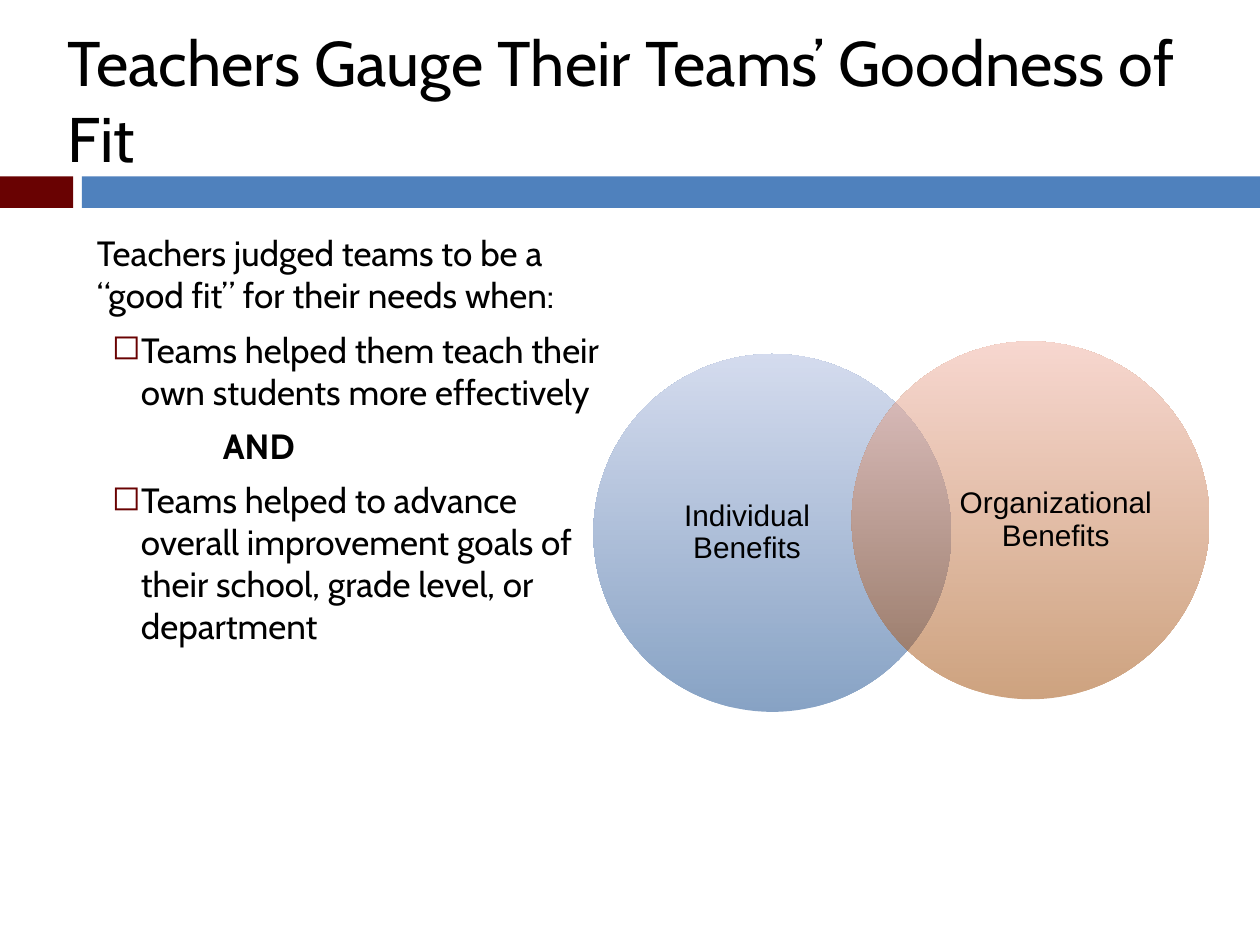
from lxml import etree
from pptx import Presentation
from pptx.dml.color import RGBColor
from pptx.enum.shapes import MSO_SHAPE
from pptx.enum.text import MSO_ANCHOR, PP_ALIGN
from pptx.oxml.ns import qn
from pptx.util import Inches, Pt

RECTANGLE, ELLIPSE = MSO_SHAPE.RECTANGLE, MSO_SHAPE.OVAL
TOP, MIDDLE = MSO_ANCHOR.TOP, MSO_ANCHOR.MIDDLE
LEFT, CENTER = PP_ALIGN.LEFT, PP_ALIGN.CENTER

COLORS = {
    "text": "000000", "maroon": "690202", "blue": "4F81BD",
    "navy": "11478B", "pale blue": "ABB9DE",
    "brown": "9D4700", "pale pink": "F0B0A0",
}

# Content
TITLE = "Teachers Gauge Their Teams’ Goodness of Fit"
BODY = [  # text, style
    ("Teachers judged teams to be a “good fit” for their needs when:", "plain"),
    ("Teams helped them teach their own students more effectively", "bullet"),
    ("AND", "joiner"),
    ("Teams helped to advance overall improvement goals of their school, "
     "grade level, or department", "bullet"),
]
INDENTS = {"plain": (0, 0), "bullet": (0.35, -0.23), "joiner": (1, 0)}
BARS = [  # left, width, color
    (0, 0.58, "maroon"),
    (0.65, 9.35, "blue"),
]
CIRCLES = [  # label, left, top, label offset, bottom color, top color
    ("Individual Benefits", 4.71, 2.81, 0.4, "navy", "pale blue"),
    ("Organizational Benefits", 6.76, 2.71, 0.8, "brown", "pale pink"),
]
DIAMETER, LABEL_WIDTH, LABEL_HEIGHT = 2.84, 1.64, 2.17
OPACITY = 50

# Text formats
TITLE_FONT = {"size": Pt(36), "name": "Cabin"}
BODY_FONT = {"size": Pt(20), "name": "Cabin"}
LABEL_FONT = {"size": Pt(17), "name": "Arial"}
BODY_PARA = {"alignment": LEFT, "space_before": Pt(7)}
LABEL_PARA = {"alignment": CENTER, "line_spacing": 0.9}


def color(name):
    return RGBColor.from_string(COLORS[name])


def set_all(target, values):
    for name, value in values.items():
        setattr(target, name, value)


def add_shape(page, kind, *place):
    shape = page.shapes.add_shape(kind, *map(Inches, place))
    shape.shadow.inherit = False
    shape.line.fill.background()
    return shape


def add_text(page, place, texts, font, para_format, anchor=TOP, inset=0.1):
    box = page.shapes.add_textbox(*map(Inches, place))
    frame = box.text_frame
    set_all(frame, {"word_wrap": True, "vertical_anchor": anchor})
    for side in ("left", "top", "right", "bottom"):
        setattr(frame, f"margin_{side}", Inches(inset))
    for index, text in enumerate(texts):
        para = frame.add_paragraph() if index else frame.paragraphs[0]
        set_all(para, para_format)
        span = para.add_run()
        span.text = text
        set_all(span.font, font)
        span.font.color.rgb = color("text")
    return frame


def indent(para, left, first):
    properties = para._p.get_or_add_pPr()
    properties.set("marL", str(Inches(left)))
    properties.set("indent", str(Inches(first)))
    return properties


def add_bullet(properties):
    bullet_color = etree.SubElement(properties, qn("a:buClr"))
    etree.SubElement(bullet_color, qn("a:srgbClr"), val=COLORS["maroon"])
    etree.SubElement(properties, qn("a:buChar"), char="◻")


def fill_gradient(shape, *names):
    shape.fill.gradient()
    shape.fill.gradient_angle = 90
    for position, (stop, name) in enumerate(zip(shape.fill.gradient_stops, names)):
        stop.position = position
        stop.color.rgb = color(name)
    for stop_color in shape._element.spPr.iter(qn("a:srgbClr")):
        etree.SubElement(stop_color, qn("a:alpha"), val=str(OPACITY * 1000))


def main():
    deck = Presentation()
    deck.slide_width, deck.slide_height = Inches(10), Inches(7.5)
    page = deck.slides.add_slide(deck.slide_layouts[6])

    # Divider bars
    for left, width, name in BARS:
        bar = add_shape(page, RECTANGLE, left, 1.4, width, 0.25)
        bar.fill.solid()
        bar.fill.fore_color.rgb = color(name)

    # Title and body
    add_text(page, (0.44, 0.25, 9.56, 1.08), [TITLE], TITLE_FONT,
             {"alignment": LEFT}, MIDDLE)
    body = add_text(page, (0.67, 1.74, 4.25, 5), [text for text, _ in BODY],
                    BODY_FONT, BODY_PARA)
    for para, (_, style) in zip(body.paragraphs, BODY):
        properties = indent(para, *INDENTS[style])
        if style == "bullet":
            add_bullet(properties)
        para.runs[0].font.bold = style == "joiner"

    # Overlapping circles with labels
    for label, left, top, offset, bottom_color, top_color in CIRCLES:
        circle = add_shape(page, ELLIPSE, left, top, DIAMETER, DIAMETER)
        fill_gradient(circle, bottom_color, top_color)
        label_top = top + (DIAMETER - LABEL_HEIGHT) / 2
        add_text(page, (left + offset, label_top, LABEL_WIDTH, LABEL_HEIGHT),
                 [label], LABEL_FONT, LABEL_PARA, MIDDLE, 0)

    deck.save("out.pptx")


if __name__ == "__main__":
    main()
